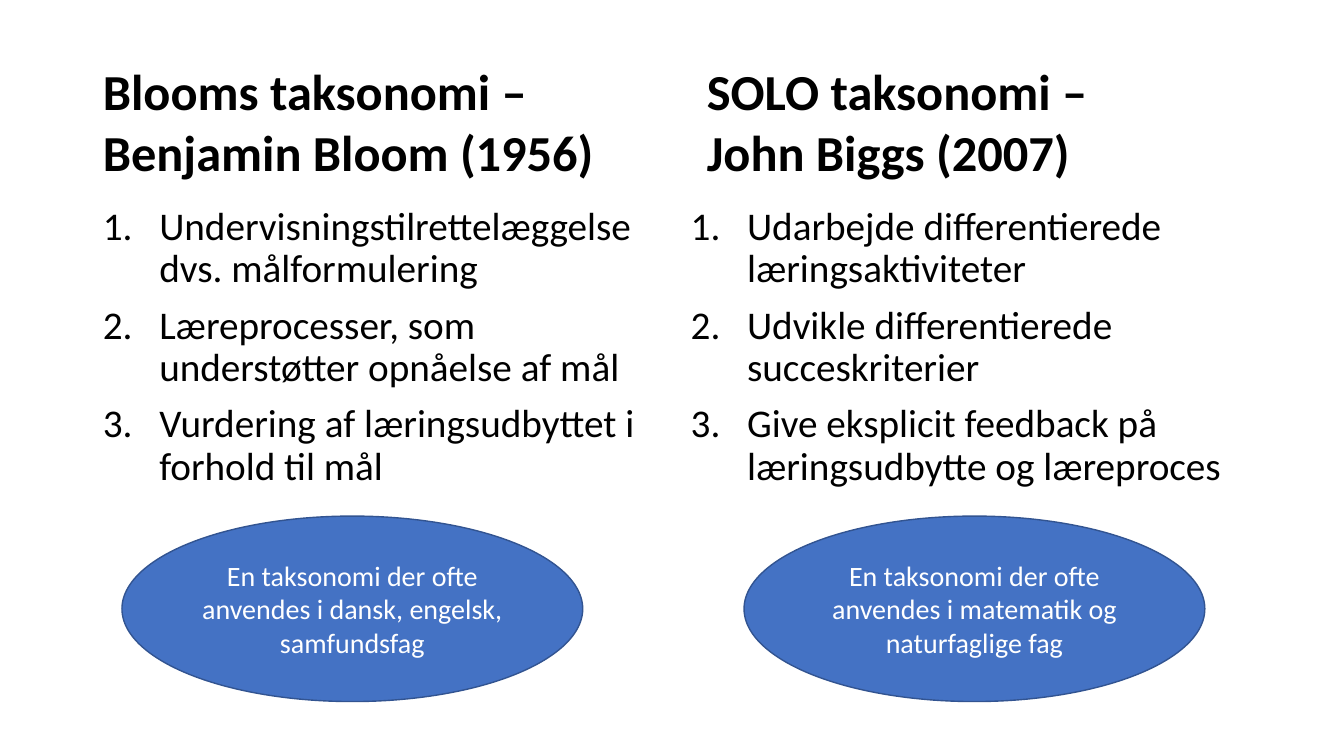
from dataclasses import dataclass

from lxml.etree import SubElement
from pptx import Presentation
from pptx.dml.color import RGBColor
from pptx.enum.shapes import MSO_SHAPE
from pptx.enum.text import MSO_ANCHOR, MSO_AUTO_SIZE, PP_ALIGN
from pptx.oxml.ns import qn
from pptx.shapes.base import BaseShape
from pptx.slide import Slide
from pptx.text.text import TextFrame
from pptx.util import Inches, Pt

COMPARISON = 4
INDENT = Inches(0.56)


@dataclass
class Column:
    head: str
    head_left: float
    points: list[str]
    list_left: float
    note: str
    note_left: float


COLUMNS = [
    Column(
        "Blooms taksonomi – Benjamin Bloom (1956)", 0.92,
        ["Undervisningstilrettelæggelse dvs. målformulering",
         "Læreprocesser, som understøtter opnåelse af mål",
         "Vurdering af læringsudbyttet i forhold til mål"], 0.92,
        "En taksonomi der ofte anvendes i dansk, engelsk, samfundsfag", 1.21,
    ),
    Column(
        "SOLO taksonomi –\nJohn Biggs (2007)", 6.91,
        ["Udarbejde differentierede læringsaktiviteter",
         "Udvikle differentierede succeskriterier",
         "Give eksplicit feedback på læringsudbytte og læreproces"], 6.75,
        "En taksonomi der ofte anvendes i matematik og naturfaglige fag", 7.38,
    ),
]


def color(code: str) -> RGBColor:
    return RGBColor.from_string(code)


def place(shape: BaseShape, left: float, top: float, width: float, height: float) -> None:
    shape.left, shape.top = Inches(left), Inches(top)
    shape.width, shape.height = Inches(width), Inches(height)


def write(frame: TextFrame, text: str, size: int, code: str, bold: bool = False) -> None:
    frame.text = text
    frame.word_wrap = True
    frame.auto_size = MSO_AUTO_SIZE.NONE
    frame.vertical_anchor = MSO_ANCHOR.TOP
    for para in frame.paragraphs:
        for run in para.runs:
            run.font.name = "Calibri"
            run.font.size = Pt(size)
            run.font.bold = bold
            run.font.color.rgb = color(code)


def add_head(shape: BaseShape, column: Column) -> None:
    place(shape, column.head_left, 0.55, 5.51, 1.31)
    write(shape.text_frame, column.head, 36, "000000", bold=True)
    for para in shape.text_frame.paragraphs:
        para.space_before = Pt(0)


def add_list(shape: BaseShape, column: Column) -> None:
    place(shape, column.list_left, 2, 5.67, 4.76)
    write(shape.text_frame, "\n".join(column.points), 28, "000000")
    for para in shape.text_frame.paragraphs:
        para.line_spacing = 0.9
        para.space_before = Pt(10)
        props = para._p.get_or_add_pPr()
        props.set("marL", str(INDENT))
        props.set("indent", str(-INDENT))
        SubElement(props, qn("a:buFont"), typeface="+mj-lt")
        SubElement(props, qn("a:buAutoNum"), type="arabicPeriod")


def add_note(slide: Slide, column: Column) -> None:
    oval = slide.shapes.add_shape(
        MSO_SHAPE.OVAL, Inches(column.note_left), Inches(5.12), Inches(4.57), Inches(1.84))
    oval.shadow.inherit = False
    oval.fill.solid()
    oval.fill.fore_color.rgb = color("4472C4")
    oval.line.color.rgb = color("325491")
    oval.line.width = Pt(1)
    write(oval.text_frame, column.note, 20, "FFFFFF")
    oval.text_frame.vertical_anchor = MSO_ANCHOR.MIDDLE
    oval.text_frame.paragraphs[0].alignment = PP_ALIGN.CENTER


def main() -> None:
    deck = Presentation()
    deck.slide_width, deck.slide_height = Inches(13.33), Inches(7.5)
    slide = deck.slides.add_slide(deck.slide_layouts[COMPARISON])
    title, *bodies = slide.placeholders
    title.element.getparent().remove(title.element)
    for column, head, points in zip(COLUMNS, bodies[::2], bodies[1::2]):
        add_head(head, column)
        add_list(points, column)
        add_note(slide, column)
    deck.save("out.pptx")


if __name__ == "__main__":
    main()
